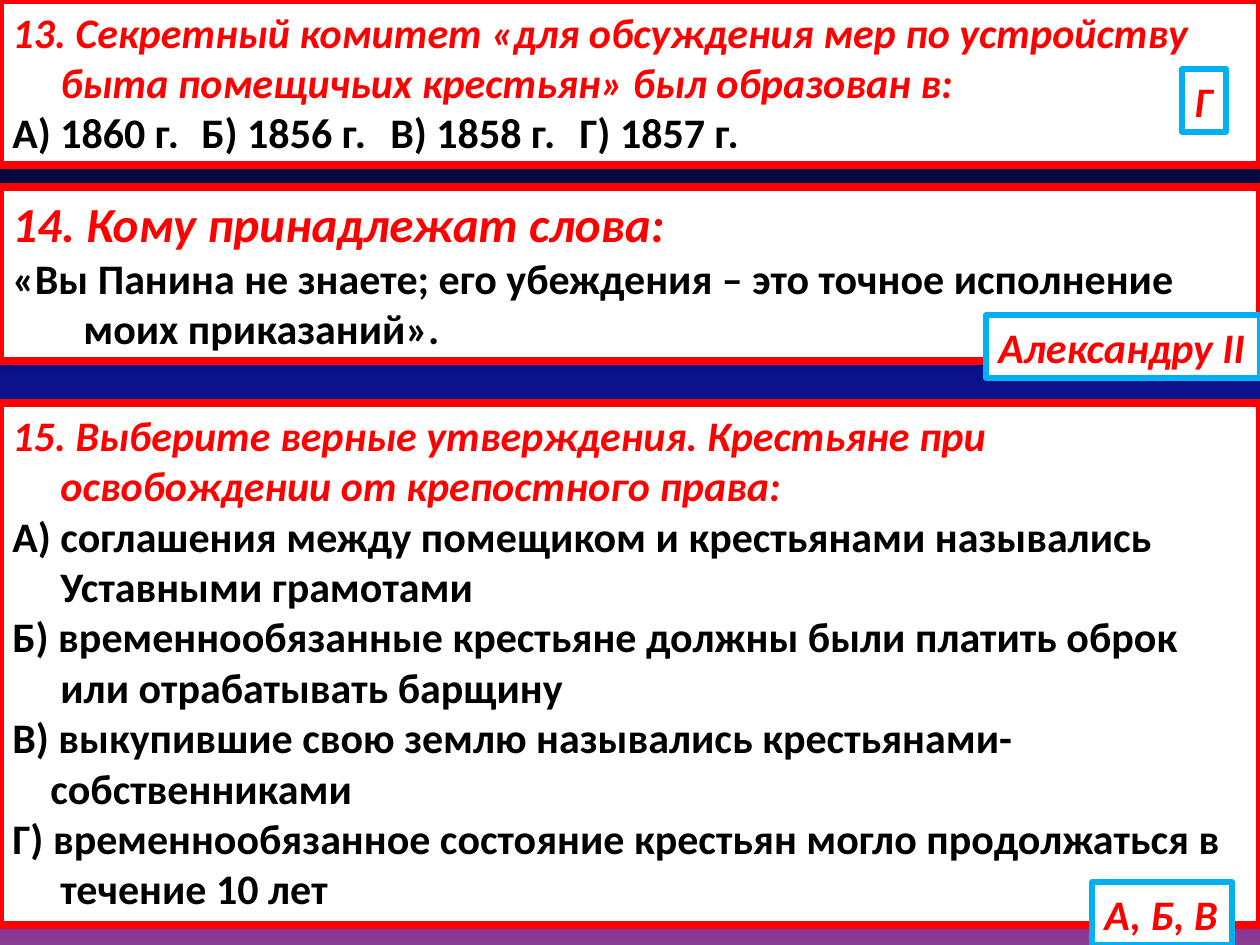
from lxml.etree import SubElement
from pptx import Presentation
from pptx.dml.color import RGBColor
from pptx.enum.text import MSO_ANCHOR, MSO_AUTO_SIZE, PP_ALIGN
from pptx.oxml.ns import qn
from pptx.util import Emu, Pt

SCALE = 914400 / 126
COLORS = {"red": "FF0000", "blue": "00B0F0", "white": "FFFFFF", "black": "000000"}
BACKGROUND = [(0, "000000"), (40, "0A128C"), (70, "181CC7"), (88, "7005D4"), (100, "8C3D91")]
HANG, WIDE_HANG, SHORT_HANG = 48, 71, 38
OPTION_STEP = 308


def px(value):
    return Emu(round(value * SCALE))


def add_box(slide, place, border, border_width, lines, wrap):
    """Each line is (text, size, is_question, left margin, first-line indent)."""
    box = slide.shapes.add_textbox(*[px(value) for value in place])
    box.fill.solid()
    box.fill.fore_color.rgb = RGBColor.from_string(COLORS["white"])
    box.line.color.rgb = RGBColor.from_string(COLORS[border])
    box.line.width = Pt(border_width)
    frame = box.text_frame
    frame.word_wrap = wrap
    frame.auto_size = MSO_AUTO_SIZE.SHAPE_TO_FIT_TEXT
    frame.vertical_anchor = MSO_ANCHOR.TOP
    frame.text = "\n".join(line[0] for line in lines)
    for para, (text, size, is_question, margin, indent) in zip(frame.paragraphs, lines):
        para.alignment = PP_ALIGN.LEFT
        properties = para._p.get_or_add_pPr()
        properties.set("marL", str(px(margin)))
        properties.set("indent", str(px(indent)))
        if "\t" in text:
            tabs = SubElement(properties, qn("a:tabLst"))
            for number in range(1, text.count("\t") + 1):
                SubElement(tabs, qn("a:tab"), pos=str(px(number * OPTION_STEP)), algn="l")
        for span in para.runs:
            span.font.name = "Calibri"
            span.font.size = Pt(size)
            span.font.bold = True
            span.font.italic = is_question
            span.font.color.rgb = RGBColor.from_string(COLORS["red" if is_question else "black"])


deck = Presentation()
deck.slide_width, deck.slide_height = px(1260), px(945)
slide = deck.slides.add_slide(deck.slide_layouts[6])

fill = slide.background.fill
fill.gradient()
fill.gradient_angle = 270
stops = slide.background._cSld.find(".//" + qn("a:gsLst"))
for stop in list(stops):
    stops.remove(stop)
for percent, color in BACKGROUND:
    stop = SubElement(stops, qn("a:gs"), pos=str(percent * 1000))
    SubElement(stop, qn("a:srgbClr"), val=color)

committee = [
    ("13. Секретный комитет «для обсуждения мер по устройству быта помещичьих крестьян» был образован в:",
     24, True, HANG, -HANG),
    ("А) 1860 г.\tБ) 1856 г.\tВ) 1858 г.\tГ) 1857 г.", 24, False, 0, 0),
]
quotation = [
    ("14. Кому принадлежат слова:", 28, True, HANG, -HANG),
    ("«Вы Панина не знаете; его убеждения – это точное исполнение моих приказаний».",
     24, False, WIDE_HANG, -WIDE_HANG),
]
statements = [
    ("15. Выберите верные утверждения. Крестьяне при освобождении от крепостного права:",
     24, True, HANG, -HANG),
]
for first, second, margin in [
    ("А) соглашения между помещиком и крестьянами назывались", "Уставными грамотами", HANG),
    ("Б) временнообязанные крестьяне должны были платить оброк", "или отрабатывать барщину", HANG),
    ("В) выкупившие свою землю назывались крестьянами-", "собственниками", SHORT_HANG),
    ("Г) временнообязанное состояние крестьян могло продолжаться в", "течение 10 лет", HANG),
]:
    statements.append((first, 24, False, WIDE_HANG, -WIDE_HANG))
    statements.append((second, 24, False, margin, 0))

for top, height, question, answer, answer_place in [
    (0, 165, committee, "Г", (1182, 69, 44, 63)),
    (187, 174, quotation, "Александру II", (986, 315, 274, 63)),
    (403, 522, statements, "А, Б, В", (1092, 882, 140, 63)),
]:
    add_box(slide, (0, top, 1260, height), "red", 4.5, question, True)
    add_box(slide, answer_place, "blue", 3, [(answer, 24, True, 0, 0)], False)

deck.save("out.pptx")
